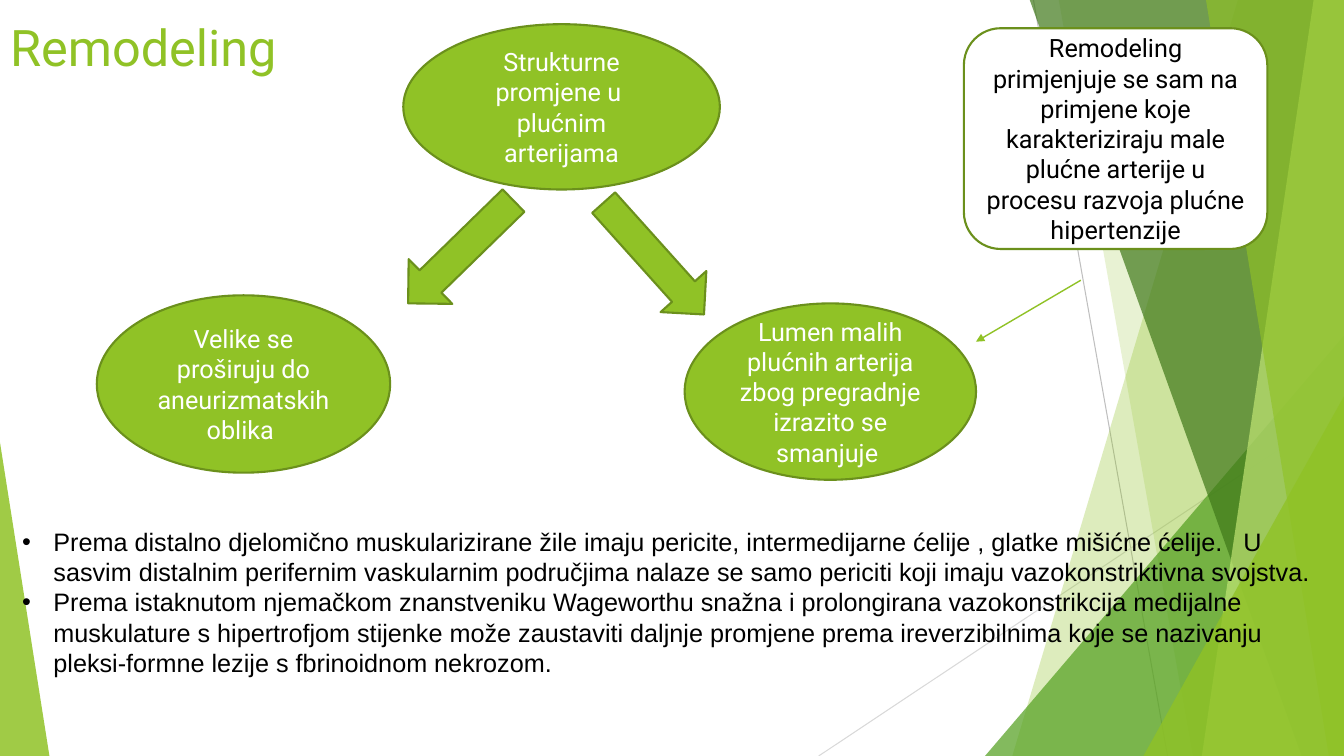
from lxml import etree
from pptx import Presentation
from pptx.dml.color import RGBColor
from pptx.enum.shapes import MSO_CONNECTOR, MSO_SHAPE
from pptx.enum.text import MSO_ANCHOR, MSO_AUTO_SIZE, PP_ALIGN
from pptx.oxml.ns import qn
from pptx.util import Inches, Pt

ELLIPSE = MSO_SHAPE.OVAL
ROUNDED = MSO_SHAPE.ROUNDED_RECTANGLE
DOWN_ARROW = MSO_SHAPE.DOWN_ARROW
TRIANGLE = MSO_SHAPE.ISOSCELES_TRIANGLE
STRAIGHT = MSO_CONNECTOR.STRAIGHT
MIDDLE = MSO_ANCHOR.MIDDLE
TOP = MSO_ANCHOR.TOP
CENTER = PP_ALIGN.CENTER
LEFT = PP_ALIGN.LEFT
FIT_SHAPE = MSO_AUTO_SIZE.SHAPE_TO_FIT_TEXT
NO_FIT = MSO_AUTO_SIZE.NONE

WHITE = RGBColor(0xFF, 0xFF, 0xFF)
BLACK = RGBColor(0x00, 0x00, 0x00)
LIME = RGBColor(0x90, 0xC2, 0x26)
OLIVE = RGBColor(0x6B, 0x90, 0x1C)
GREEN = RGBColor(0x54, 0xA0, 0x21)
FOREST = RGBColor(0x3F, 0x78, 0x19)
PALE = RGBColor(0xC0, 0xE4, 0x74)
GRAY = RGBColor(0xBF, 0xBF, 0xBF)
SILVER = RGBColor(0xD9, 0xD9, 0xD9)

WIDTH, HEIGHT = 13.33, 7.5
BLEED = -0.01
INDENT = 0.31


class SlideBuilder:
    heading_font = "Roboto"
    body_font = "Arial"
    text_size = 18

    def __init__(self, prs):
        self.s = prs.slides.add_slide(prs.slide_layouts[1])

    def fill(self, sp, color, opacity=100):
        sp.shadow.inherit = False
        sp.fill.solid()
        sp.fill.fore_color.rgb = color
        if opacity < 100:
            clr = sp.fill._xPr.find(".//" + qn("a:srgbClr"))
            etree.SubElement(clr, qn("a:alpha"), val=str(opacity * 1000))

    def run(self, p, text, size, font, color):
        r = p.add_run()
        r.text = text
        r.font.size = Pt(size)
        r.font.name = font
        r.font.color.rgb = color

    def line(self, start, end, color, width, arrow=False):
        cxn = self.s.shapes.add_connector(STRAIGHT, *map(Inches, start + end))
        cxn.line.color.rgb = color
        cxn.line.width = Pt(width)
        if arrow:
            etree.SubElement(cxn.line._get_or_add_ln(), qn("a:tailEnd"), type="triangle")
        etree.SubElement(cxn._element.spPr, qn("a:effectLst"))

    def facet(self, top_x, bottom_x, color, opacity):
        fb = self.s.shapes.build_freeform(Inches(top_x), Inches(BLEED))
        corners = [(WIDTH, BLEED), (WIDTH, HEIGHT), (bottom_x, HEIGHT)]
        fb.add_line_segments([(Inches(x), Inches(y)) for x, y in corners])
        sp = fb.convert_to_shape()
        self.fill(sp, color, opacity)
        sp.line.fill.background()

    def triangle(self, x, y, w, apex, color, opacity):
        sp = self.s.shapes.add_shape(TRIANGLE, *map(Inches, (x, y, w, HEIGHT - y)))
        sp.adjustments[0] = apex
        self.fill(sp, color, opacity)
        sp.line.fill.background()

    def shape(self, kind, box, paragraphs=(), fill=LIME, color=WHITE, rotation=0):
        sp = self.s.shapes.add_shape(kind, *map(Inches, box))
        sp.rotation = rotation
        self.fill(sp, fill)
        sp.line.color.rgb = OLIVE
        sp.line.width = Pt(1.5)
        tf = sp.text_frame
        tf.word_wrap = True
        tf.vertical_anchor = MIDDLE
        for i, text in enumerate(paragraphs):
            p = tf.add_paragraph() if i else tf.paragraphs[0]
            p.alignment = CENTER
            self.run(p, text, self.text_size, self.heading_font, color)

    def place(self, sp, box, anchor, fit):
        sp.left, sp.top, sp.width, sp.height = map(Inches, box)
        self.s.shapes._spTree.append(sp._element)
        tf = sp.text_frame
        tf.word_wrap = True
        tf.auto_size = fit
        tf.vertical_anchor = anchor
        return tf

    def title(self, text, box):
        p = self.place(self.s.shapes.title, box, MIDDLE, NO_FIT).paragraphs[0]
        p.alignment = LEFT
        self.run(p, text, 36, self.heading_font, LIME)

    def bullets(self, items, box):
        tf = self.place(self.s.placeholders[1], box, TOP, FIT_SHAPE)
        for i, text in enumerate(items):
            p = tf.add_paragraph() if i else tf.paragraphs[0]
            p.space_before = Pt(0)
            pPr = p._p.get_or_add_pPr()
            pPr.set("marL", str(Inches(INDENT)))
            pPr.set("indent", str(-Inches(INDENT)))
            etree.SubElement(pPr, qn("a:buFont"), typeface=self.body_font)
            etree.SubElement(pPr, qn("a:buChar"), char="•")
            self.run(p, text, self.text_size, self.body_font, BLACK)


def draw_backdrop(b):
    b.line((10.25, 0), (11.58, HEIGHT), GRAY, 0.75)
    b.line((WIDTH, 4.03), (8.12, HEIGHT), SILVER, 0.75)
    b.facet(12.28, 10.04, LIME, 30)
    b.facet(10.5, 11.83, LIME, 20)
    b.triangle(9.77, 3.33, 3.56, 1, GREEN, 72)
    b.facet(10.21, 12.91, FOREST, 70)
    b.facet(13.03, 11.92, PALE, 70)
    b.facet(11.96, 13.18, LIME, 65)
    b.triangle(11.34, 3.93, 1.99, 1, LIME, 80)
    b.triangle(0, 4.39, 0.49, 0, LIME, 85)


def main():
    prs = Presentation()
    prs.slide_width, prs.slide_height = Inches(WIDTH), Inches(HEIGHT)
    b = SlideBuilder(prs)
    draw_backdrop(b)
    b.title("Remodeling", (0, 0.07, 3.44, 0.77))
    b.shape(ELLIPSE, (4, 0.24, 3.14, 1.64),
            ["Strukturne promjene u ", "plućnim arterijama"])
    b.shape(DOWN_ARROW, (4.26, 1.77, 0.62, 1.46), rotation=45.7)
    b.shape(ELLIPSE, (0.96, 2.93, 2.91, 1.76),
            ["Velike se proširuju do aneurizmatskih oblika "])
    b.shape(DOWN_ARROW, (6.18, 1.82, 0.61, 1.49), rotation=318.1)
    b.shape(ELLIPSE, (6.79, 3.01, 2.89, 1.75),
            ["Lumen malih plućnih arterija zbog pregradnje izrazito se smanjuje "])
    b.shape(ROUNDED, (9.56, 0.28, 3.01, 2.19),
            ["Remodeling primjenjuje se sam na primjene koje karakteriziraju male "
             "plućne arterije u procesu razvoja plućne hipertenzije"],
            fill=WHITE, color=BLACK)
    b.line((10.72, 2.78), (9.68, 3.39), LIME, 1, arrow=True)
    b.bullets([
        "Prema distalno djelomično muskularizirane žile imaju pericite, "
        "intermedijarne ćelije , glatke mišićne ćelije.   U sasvim distalnim "
        "perifernim vaskularnim područjima nalaze se samo periciti koji imaju "
        "vazokonstriktivna svojstva.",
        "Prema istaknutom njemačkom znanstveniku Wageworthu snažna i "
        "prolongirana vazokonstrikcija medijalne muskulature s hipertrofjom "
        "stijenke može zaustaviti daljnje promjene prema ireverzibilnima koje "
        "se nazivanju pleksi-formne lezije s fbrinoidnom nekrozom.",
    ], (0.12, 5.17, 13.09, 1.62))
    prs.save("out.pptx")


if __name__ == "__main__":
    main()
